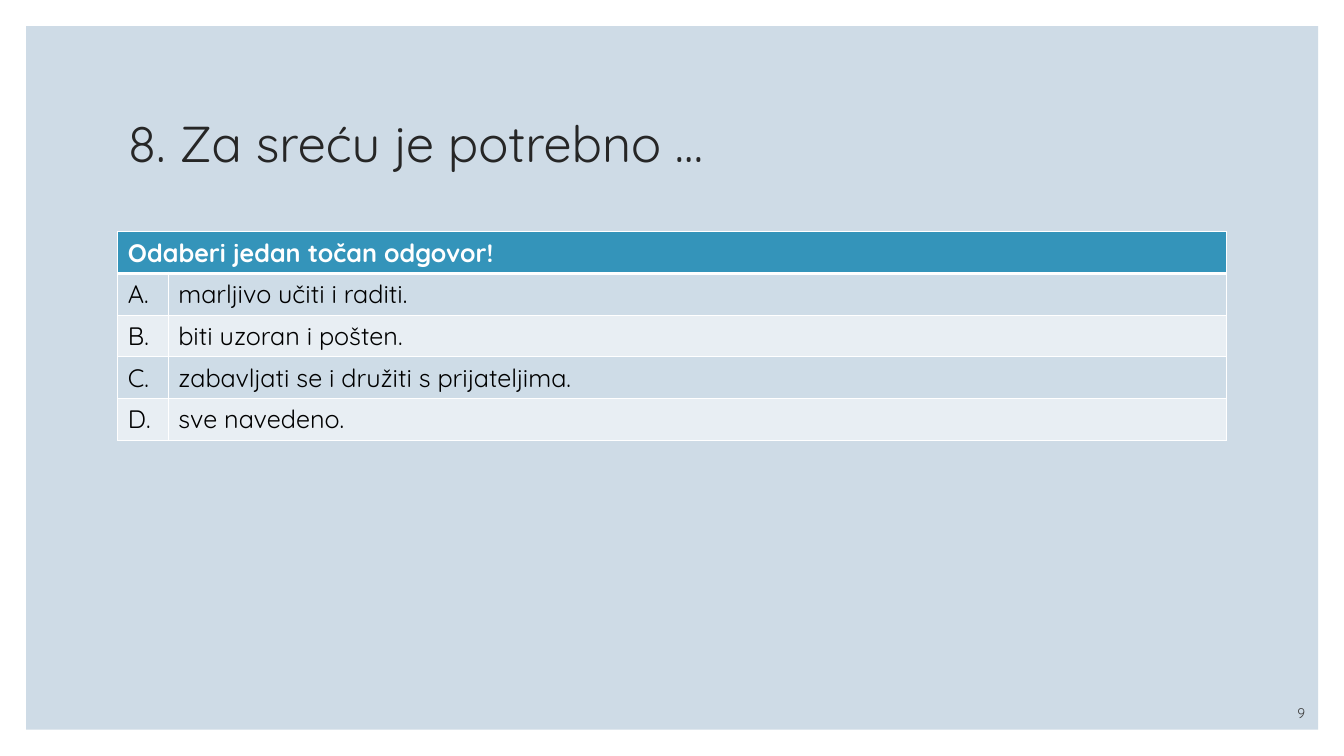
from lxml import etree
from pptx import Presentation
from pptx.dml.color import RGBColor
from pptx.enum.shapes import MSO_SHAPE
from pptx.enum.text import MSO_ANCHOR, MSO_AUTO_SIZE, PP_ALIGN
from pptx.oxml.ns import qn
from pptx.util import Cm, Pt

RECT = MSO_SHAPE.RECTANGLE
MIDDLE, BOTTOM = MSO_ANCHOR.MIDDLE, MSO_ANCHOR.BOTTOM
LEFT, RIGHT = PP_ALIGN.LEFT, PP_ALIGN.RIGHT
NO_FIT = MSO_AUTO_SIZE.NONE

FONT = "Quicksand"
WHITE = RGBColor(0xFF, 0xFF, 0xFF)
BLACK = RGBColor(0, 0, 0)
DARK = RGBColor(0x26, 0x26, 0x26)
GREY = RGBColor(0x40, 0x40, 0x40)
PANEL = RGBColor(0xCE, 0xDB, 0xE6)
TEAL = RGBColor(0x34, 0x94, 0xBA)
BANDS = (RGBColor(0xCE, 0xDC, 0xE7), RGBColor(0xE8, 0xEE, 0xF3))

HEADER = "Odaberi jedan točan odgovor!"
ANSWERS = (
    ("A.", "marljivo učiti i raditi."),
    ("B.", "biti uzoran i pošten."),
    ("C.", "zabavljati se i družiti s prijateljima."),
    ("D.", "sve navedeno."),
)
ROW = Cm(1.05)
COLS = (Cm(1.27), Cm(26.67))


def write(frame, text, size, color, align=LEFT, bold=False):
    frame.text = text
    para = frame.paragraphs[0]
    para.alignment = align
    font = para.font
    font.name, font.size, font.bold = FONT, Pt(size), bold
    font.color.rgb = color
    return para


def add_panel(slide):
    panel = slide.shapes.add_shape(RECT, Cm(0.66), Cm(0.66), Cm(32.56), Cm(17.73))
    panel.shadow.inherit = False
    panel.fill.solid()
    panel.fill.fore_color.rgb = PANEL
    panel.line.fill.background()
    # Send the panel behind the title
    slide.shapes.title._element.addprevious(panel._element)


def set_title(slide, text):
    title = slide.shapes.title
    title.left, title.top = Cm(2.97), Cm(1.78)
    title.width, title.height = Cm(27.94), Cm(3.81)
    frame = title.text_frame
    frame.vertical_anchor = MIDDLE
    frame.auto_size = NO_FIT
    write(frame, text, 36, DARK).line_spacing = 0.9


def add_edge(cell, side, width):
    props = cell._tc.get_or_add_tcPr()
    line = etree.SubElement(props, qn(f"a:ln{side}"), w=str(Pt(width)))
    fill = etree.SubElement(line, qn("a:solidFill"))
    etree.SubElement(fill, qn("a:srgbClr"), val=str(WHITE))


def style_cell(cell, row):
    # The rule between header and answers is thicker
    widths = {"L": 1, "R": 1, "T": 3 if row == 1 else 1, "B": 3 if row == 0 else 1}
    for side, width in widths.items():
        add_edge(cell, side, width)
    cell.fill.solid()
    cell.fill.fore_color.rgb = BANDS[(row - 1) % 2] if row else TEAL


def add_answers(slide):
    count = len(ANSWERS) + 1
    frame = slide.shapes.add_table(
        count, len(COLS), Cm(2.97), Cm(5.84), sum(COLS), ROW * count)
    table = frame.table
    table.horz_banding = False
    for col, width in zip(table.columns, COLS):
        col.width = width
    for i, row in enumerate(table.rows):
        row.height = ROW
        for cell in row.cells:
            style_cell(cell, i)

    # Header across both columns, then one answer a row
    head = table.cell(0, 0)
    head.merge(table.cell(0, 1))
    write(head.text_frame, HEADER, 18, WHITE, bold=True)
    for i, answer in enumerate(ANSWERS, 1):
        for j, text in enumerate(answer):
            write(table.cell(i, j).text_frame, text, 18, BLACK)


def add_number(slide, text):
    box = slide.shapes.add_textbox(Cm(29.08), Cm(17.53), Cm(4.06), Cm(0.76))
    frame = box.text_frame
    frame.word_wrap = True
    frame.vertical_anchor = BOTTOM
    write(frame, text, 10, GREY, RIGHT)


def main():
    deck = Presentation()
    deck.slide_width, deck.slide_height = Cm(33.87), Cm(19.05)
    slide = deck.slides.add_slide(deck.slide_layouts[5])
    add_panel(slide)
    set_title(slide, "8. Za sreću je potrebno …")
    add_answers(slide)
    add_number(slide, "9")
    deck.save("out.pptx")


if __name__ == "__main__":
    main()
